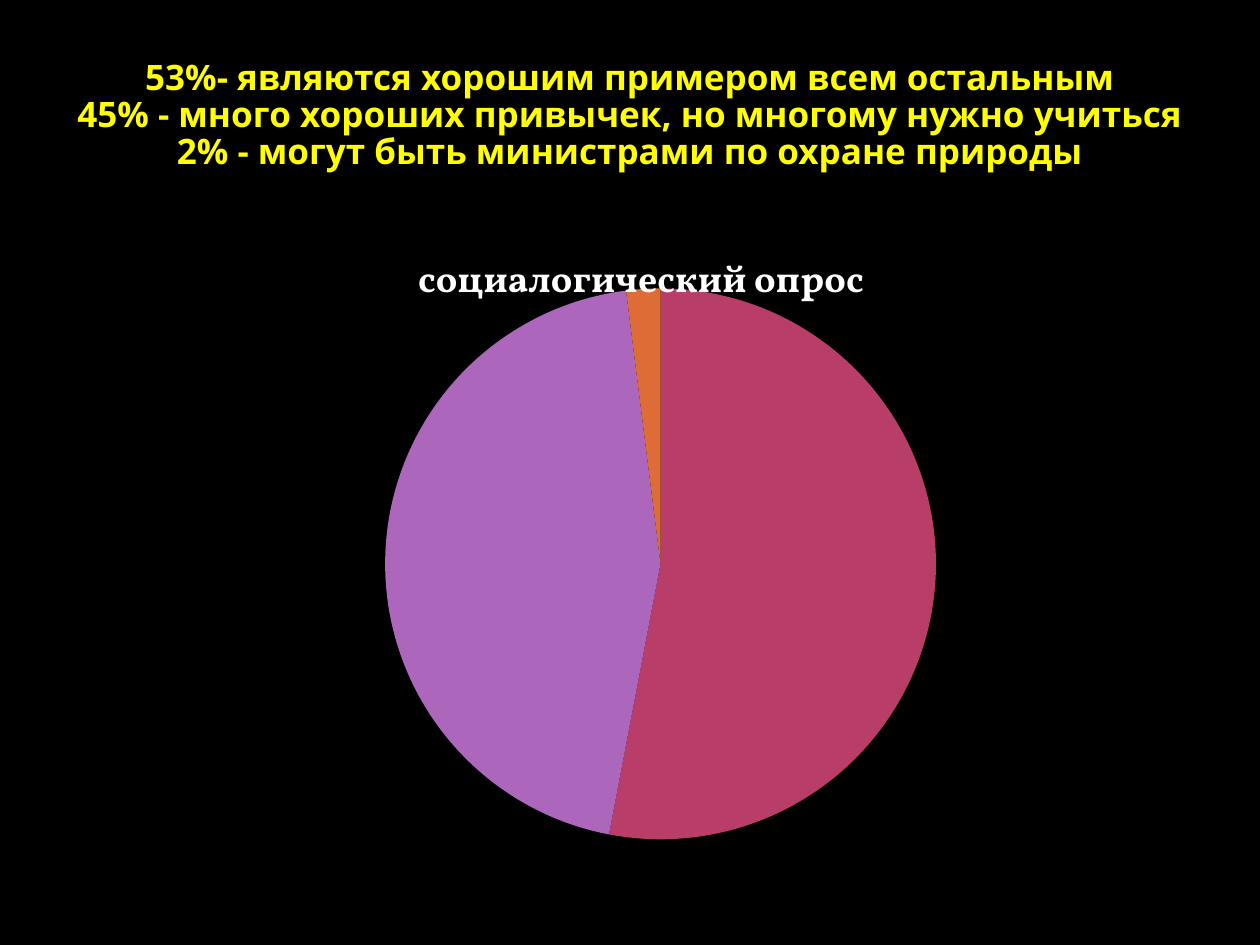
from pptx import Presentation
from pptx.chart.data import CategoryChartData
from pptx.dml.color import RGBColor
from pptx.enum.chart import XL_CHART_TYPE
from pptx.enum.text import MSO_ANCHOR, PP_ALIGN
from pptx.oxml import parse_xml
from pptx.oxml.ns import nsdecls
from pptx.util import Inches, Pt

SURVEY = "социалогический опрос"
FINDINGS = (
    "53%- являются хорошим примером всем остальным",
    "45% - много хороших привычек, но многому нужно учиться",
    "2% - могут быть министрами по охране природы",
)
ANSWERS = {"1": (53, "B83D68"), "2": (45, "AC66BB"),
           "3": (2, "DE6C36"), "4": (0, "F9B639")}
PLOT_AREA = {"x": 0.034, "y": 0.099, "w": 0.966, "h": 0.849}


def paint(fill, color):
    fill.solid()
    fill.fore_color.rgb = RGBColor.from_string(color)


def style_font(font, face, size, color, bold=False):
    font.name, font.size, font.bold = face, Pt(size), bold
    font.color.rgb = RGBColor.from_string(color)


def write(frame, text, face, size, color, bold=True, spacing=None):
    """Fill a text frame with one centred, formatted paragraph."""
    frame.text = ""
    paragraph = frame.paragraphs[0]
    paragraph.text = text
    paragraph.alignment = PP_ALIGN.CENTER
    paragraph.line_spacing = spacing
    for run in paragraph.runs:
        style_font(run.font, face, size, color, bold)


def add_findings(slide):
    heading = slide.shapes.title
    heading.left, heading.top = Inches(0.5), Inches(0.3)
    heading.width, heading.height = Inches(9), Inches(1.25)
    heading.text_frame.word_wrap = True
    heading.text_frame.vertical_anchor = MSO_ANCHOR.MIDDLE
    write(heading.text_frame, "\v".join(FINDINGS), "Open Sans", 20, "FFFF00",
          spacing=0.88)


def place_plot(chart, area):
    """Fix the inner plot area, given as shares of the chart's size."""
    plot_area = chart.plots[0]._element.getparent()
    for automatic in plot_area.findall("{*}layout"):
        plot_area.remove(automatic)
    values = "".join(f'<c:{key} val="{share}"/>' for key, share in area.items())
    plot_area.insert(0, parse_xml(
        f'<c:layout {nsdecls("c")}><c:manualLayout>'
        '<c:layoutTarget val="inner"/><c:xMode val="edge"/><c:yMode val="edge"/>'
        f'{values}</c:manualLayout></c:layout>'))


def add_survey_pie(slide):
    survey = CategoryChartData()
    survey.categories = list(ANSWERS)
    survey.add_series(SURVEY, [share for share, _ in ANSWERS.values()])
    chart = slide.shapes.add_chart(
        XL_CHART_TYPE.PIE, Inches(0.59), Inches(1.78), Inches(9), Inches(5.15),
        survey).chart
    style_font(chart.font, "Vollkorn", 18, "FFFFFF")
    chart.has_legend = False
    chart.has_title = True
    write(chart.chart_title.text_frame, SURVEY, "Vollkorn", 21.6, "FFFFFF")
    pie = chart.plots[0]
    pie.vary_by_categories = True
    for index, (_, color) in enumerate(ANSWERS.values()):
        paint(pie.series[0].points[index].format.fill, color)
    place_plot(chart, PLOT_AREA)


def main():
    deck = Presentation()
    deck.slide_width, deck.slide_height = Inches(10), Inches(7.5)
    slide = deck.slides.add_slide(deck.slide_layouts[5])
    paint(slide.background.fill, "000000")
    add_findings(slide)
    add_survey_pie(slide)
    deck.save("out.pptx")


if __name__ == "__main__":
    main()
